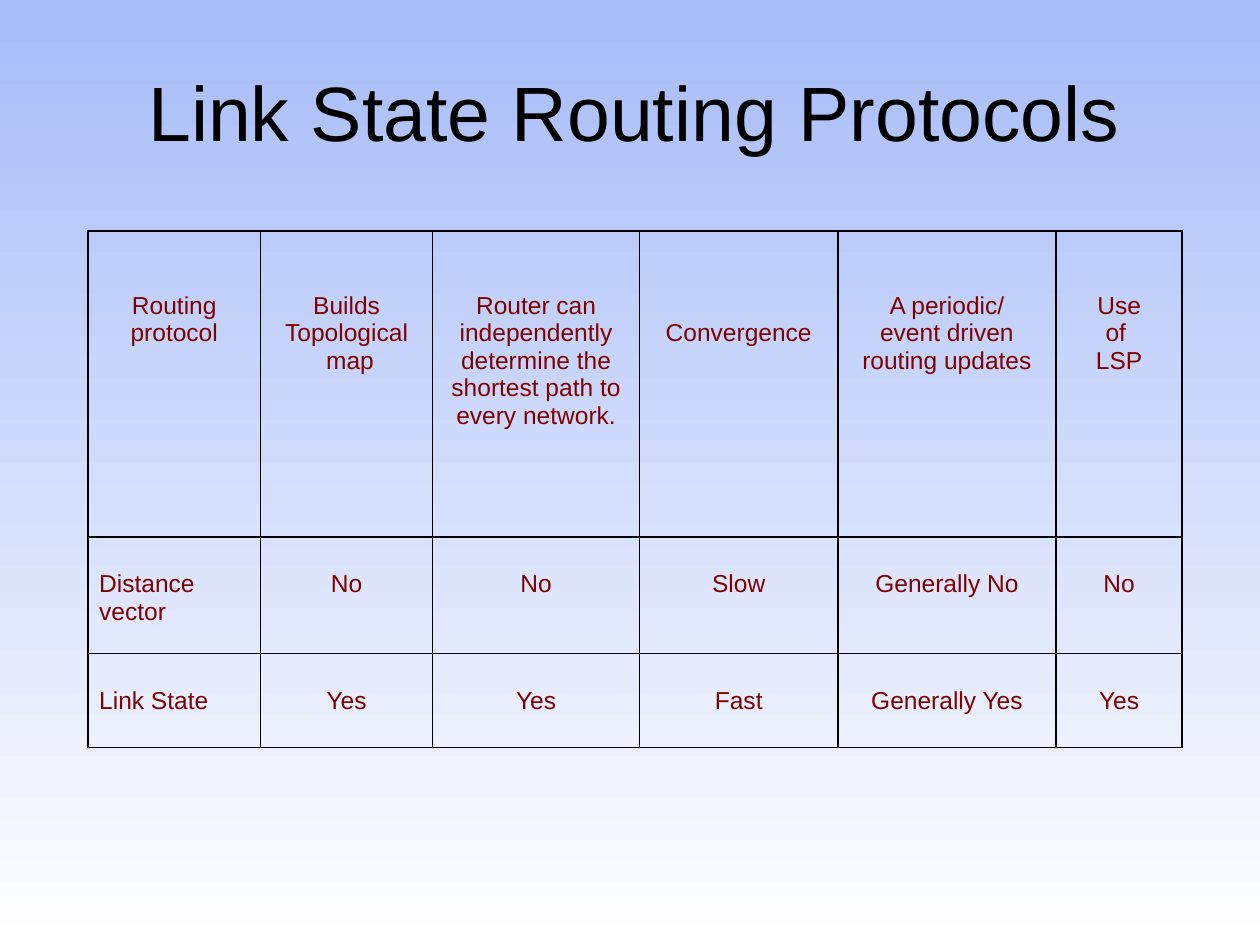
from lxml.etree import SubElement
from pptx import Presentation
from pptx.dml.color import RGBColor
from pptx.enum.text import MSO_ANCHOR, PP_ALIGN
from pptx.oxml.ns import qn
from pptx.util import Pt

TITLE = "Link State Routing Protocols"
HEADERS = [
    "Routing\nprotocol",
    "Builds\nTopological\n map",
    "Router can independently determine the shortest path to every network.",
    "Convergence",
    "A periodic/\nevent driven routing updates",
    "Use\nof \nLSP",
]
PROTOCOLS = [
    ["Distance vector", "No", "No", "Slow", "Generally No", "No"],
    ["Link State", "Yes", "Yes", "Fast", "Generally Yes", "Yes"],
]
ROWS = [HEADERS] + PROTOCOLS

COLUMN_WIDTHS = [98.8, 98.2, 118.4, 113.2, 124.8, 72]
ROW_HEIGHTS = [175, 66.5, 53.8]
TABLE_LEFT, TABLE_TOP = 50.2, 132
SIDE_MARGIN, EDGE_MARGIN = 6.5, 3.4
LINE_HEIGHT = 15.65

FONT = "Arial"
BLACK = RGBColor(0x00, 0x00, 0x00)
MAROON = RGBColor(0x80, 0x00, 0x00)
SKY = RGBColor(0xA6, 0xBB, 0xF8)
WHITE = RGBColor(0xFF, 0xFF, 0xFF)


def format_text(paragraphs, size, color, alignment):
    for paragraph in paragraphs:
        paragraph.alignment = alignment
        for run in paragraph.runs:
            run.font.name = FONT
            run.font.size = Pt(size)
            run.font.color.rgb = color


def add_borders(cell, color, width):
    properties = cell._tc.get_or_add_tcPr()
    for index, side in enumerate(("a:lnL", "a:lnR", "a:lnT", "a:lnB")):
        line = SubElement(properties, qn(side), w=str(Pt(width)))
        fill = SubElement(line, qn("a:solidFill"))
        SubElement(fill, qn("a:srgbClr"), val=str(color))
        properties.insert(index, line)


def lines_above(row, header):
    """Number of text lines left free above a cell's text."""
    if row > 0:
        return 1
    return 3 if header == "Convergence" else 2


def add_protocol_table(slide):
    table = slide.shapes.add_table(
        len(ROWS), len(HEADERS), Pt(TABLE_LEFT), Pt(TABLE_TOP),
        Pt(sum(COLUMN_WIDTHS)), Pt(sum(ROW_HEIGHTS))).table
    table.first_row = table.horz_banding = False
    for column, width in zip(table.columns, COLUMN_WIDTHS):
        column.width = Pt(width)
    for row, height in zip(table.rows, ROW_HEIGHTS):
        row.height = Pt(height)

    for r, texts in enumerate(ROWS):
        for c, text in enumerate(texts):
            cell = table.cell(r, c)
            cell.text_frame.text = text
            cell.margin_left = cell.margin_right = Pt(SIDE_MARGIN)
            cell.margin_top = Pt(EDGE_MARGIN + lines_above(r, HEADERS[c]) * LINE_HEIGHT)
            cell.margin_bottom = Pt(EDGE_MARGIN)
            cell.fill.background()
            add_borders(cell, BLACK, 1)
            is_protocol_name = r > 0 and c == 0
            format_text(cell.text_frame.paragraphs, 14, MAROON,
                        PP_ALIGN.LEFT if is_protocol_name else PP_ALIGN.CENTER)


def main():
    presentation = Presentation()
    presentation.slide_width, presentation.slide_height = Pt(720), Pt(540)
    slide = presentation.slides.add_slide(presentation.slide_layouts[5])

    background = slide.background.fill
    background.gradient()
    background.gradient_angle = 270
    for stop, color in zip(background.gradient_stops, (SKY, WHITE)):
        stop.color.rgb = color

    title = slide.shapes.title
    title.left, title.top, title.width, title.height = Pt(41.8), Pt(30.2), Pt(641.5), Pt(66.2)
    title.text_frame.text = TITLE
    title.text_frame.vertical_anchor = MSO_ANCHOR.MIDDLE
    format_text(title.text_frame.paragraphs, 44, BLACK, PP_ALIGN.CENTER)

    add_protocol_table(slide)
    presentation.save("out.pptx")


if __name__ == "__main__":
    main()
